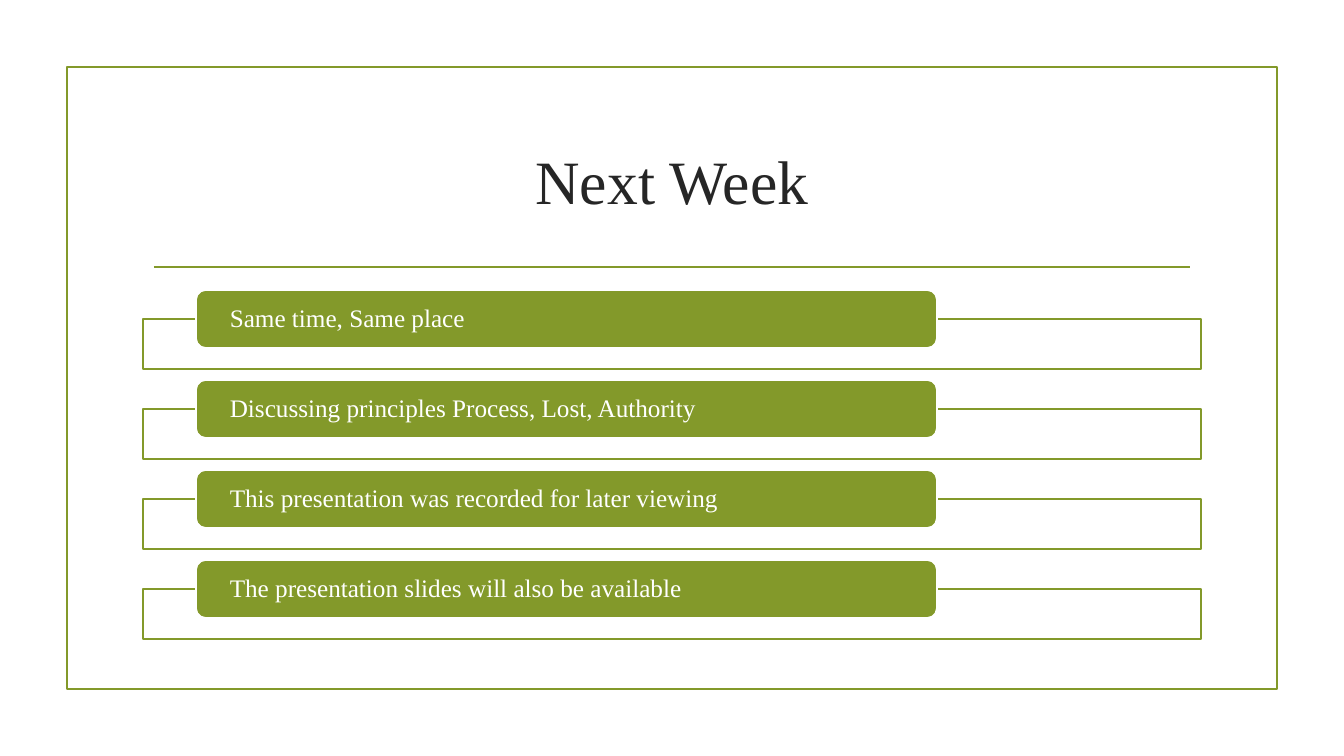
from pptx import Presentation
from pptx import util as u
from pptx.dml.color import RGBColor
from pptx.enum import shapes, text
from pptx.oxml.ns import qn
from lxml import etree

PX = 914400 / 100.8
FONT = "Times New Roman"
COLORS = {"olive": "83992A", "white": "FFFFFF", "ink": "262626"}
AGENDA = [
    "Same time, Same place",
    "Discussing principles Process, Lost, Authority",
    "This presentation was recorded for later viewing",
    "The presentation slides will also be available",
]
AGENDA_TOP = 290
AGENDA_PITCH = 90


def px(*lengths):
    return [u.Emu(round(length * PX)) for length in lengths]


def color(name):
    return RGBColor.from_string(COLORS[name])


def set_line(item, name):
    item.line.color.rgb = color(name)
    item.line.width = u.Pt(1.25)


def format_text(frame, size, name, alignment):
    frame.word_wrap = True
    frame.vertical_anchor = text.MSO_ANCHOR.MIDDLE
    para = frame.paragraphs[0]
    para.alignment = alignment
    for span in para.runs:
        span.font.name = FONT
        span.font.size = u.Pt(size)
        span.font.color.rgb = color(name)


def add_box(page, kind, bounds, line, fill=None):
    box = page.shapes.add_shape(kind, *px(*bounds))
    box.shadow.inherit = False
    if fill:
        box.fill.solid()
        box.fill.fore_color.rgb = color(fill)
    else:
        box.fill.background()
    set_line(box, line)
    return box


def add_rule(page, left, right, top):
    rule = page.shapes.add_connector(
        shapes.MSO_CONNECTOR.STRAIGHT, *px(left, top, right, top))
    set_line(rule, "olive")
    etree.SubElement(rule._element.spPr, qn("a:effectLst"))


def set_title(page, wording):
    title = page.shapes.title
    title.left, title.top, title.width, title.height = px(143, 108, 1058, 144)
    title.text_frame.text = wording
    format_text(title.text_frame, 44, "ink", text.PP_ALIGN.CENTER)


def add_agenda_item(page, top, wording):
    add_box(page, shapes.MSO_SHAPE.RECTANGLE,
            (143, top + 29, 1058, 50), "olive", "white")
    bar = add_box(page, shapes.MSO_SHAPE.ROUNDED_RECTANGLE,
                  (196, top, 741, 58), "white", "olive")
    frame = bar.text_frame
    frame.margin_left, frame.margin_right = px(31, 31)
    frame.margin_top = frame.margin_bottom = 0
    frame.text = wording
    frame.paragraphs[0].line_spacing = 0.9
    format_text(frame, 18, "white", text.PP_ALIGN.LEFT)


def main():
    deck = Presentation()
    deck.slide_width, deck.slide_height = px(1344, 756)
    page = deck.slides.add_slide(deck.slide_layouts.get_by_name("Title Only"))
    add_box(page, shapes.MSO_SHAPE.RECTANGLE, (67, 67, 1210, 622), "olive")
    add_rule(page, 154, 1190, 267)
    set_title(page, "Next Week")
    for index, wording in enumerate(AGENDA):
        add_agenda_item(page, AGENDA_TOP + index * AGENDA_PITCH, wording)
    deck.save("out.pptx")


if __name__ == "__main__":
    main()
